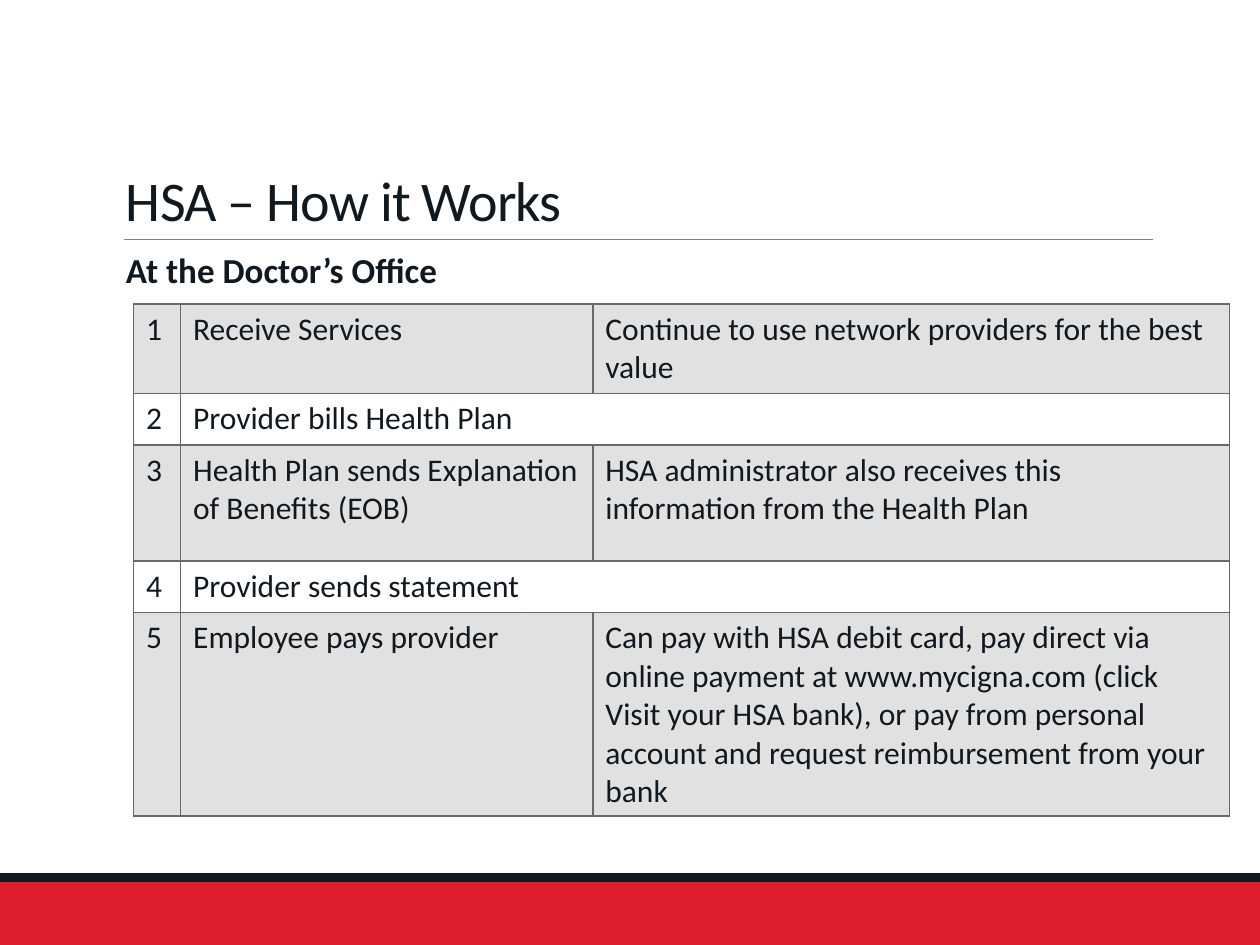
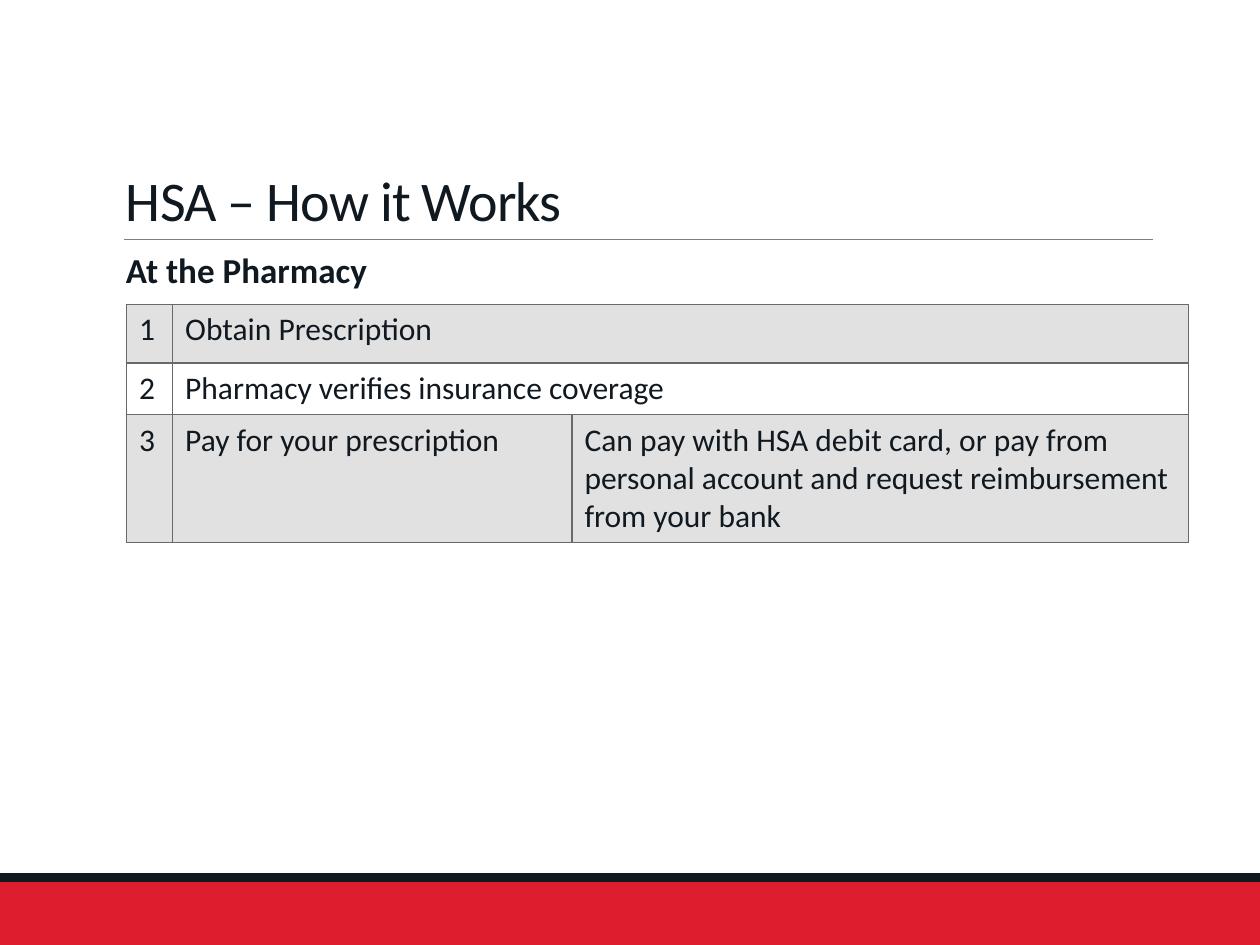
from lxml import etree
from pptx import Presentation
from pptx.dml.color import RGBColor
from pptx.enum.shapes import MSO_CONNECTOR, MSO_SHAPE
from pptx.enum.text import MSO_ANCHOR
from pptx.oxml.ns import qn
from pptx.util import Cm, Pt

# Shared colours and text formats
INK = RGBColor(0x10, 0x18, 0x20)
RED = RGBColor(0xDD, 0x1E, 0x2E)
RULE = RGBColor(0x7F, 0x7F, 0x7F)
BORDER = RGBColor(0x69, 0x69, 0x69)
SHADE = RGBColor(0xE1, 0xE1, 0xE1)

TITLE = {"name": "Calibri", "size": Pt(32)}
SUBTITLE = {"name": "Calibri", "size": Pt(20), "bold": True}
CELL = {"name": "Calibri", "size": Pt(18)}

# Table contents: a row with two entries spans the last two columns
DOCTOR_STEPS = [
    ("1", "Receive Services", "Continue to use network providers for the best value"),
    ("2", "Provider bills Health Plan"),
    ("3", "Health Plan sends Explanation of Benefits (EOB)",
     "HSA administrator also receives this information from the Health Plan"),
    ("4", "Provider sends statement"),
    ("5", "Employee pays provider",
     "Can pay with HSA debit card, pay direct via online payment at "
     "www.mycigna.com (click Visit your HSA bank), or pay from personal "
     "account and request reimbursement from your bank"),
]
PHARMACY_STEPS = [
    ("1", "Obtain Prescription"),
    ("2", "Pharmacy verifies insurance coverage"),
    ("3", "Pay for your prescription",
     "Can pay with HSA debit card, or pay from personal account and request "
     "reimbursement from your bank"),
]


def write(tf, text, fmt):
    p = tf.paragraphs[0]
    r = p.add_run()
    r.text = text
    for name, value in fmt.items():
        setattr(r.font, name, value)
    r.font.color.rgb = INK
    return p, r


def add_band(s, top, height, color):
    sp = s.shapes.add_shape(MSO_SHAPE.RECTANGLE, 0, Cm(top), Cm(25.4), Cm(height))
    sp.shadow.inherit = False
    sp.fill.solid()
    sp.fill.fore_color.rgb = color
    sp.line.fill.background()


def add_rule(s):
    line = s.shapes.add_connector(
        MSO_CONNECTOR.STRAIGHT, Cm(2.49), Cm(4.83), Cm(23.24), Cm(4.83))
    line.line.color.rgb = RULE
    line.line.width = Pt(0.5)
    etree.SubElement(line._element.spPr, qn("a:effectLst"))


def add_title(s, text):
    tf = s.shapes.add_textbox(Cm(2.29), Cm(0.79), Cm(20.96), Cm(4.04)).text_frame
    tf.word_wrap = True
    tf.vertical_anchor = MSO_ANCHOR.BOTTOM
    p, r = write(tf, text, TITLE)
    p.line_spacing = 0.85
    r._r.get_or_add_rPr().set("spc", "-50")


def add_subtitle(s, text, width):
    tf = s.shapes.add_textbox(Cm(2.29), Cm(4.88), Cm(width), Cm(1.11)).text_frame
    tf.word_wrap = False
    write(tf, text, SUBTITLE)


def add_borders(cell):
    tcPr = cell._tc.get_or_add_tcPr()
    for side in ("lnL", "lnR", "lnT", "lnB"):
        ln = etree.SubElement(tcPr, qn(f"a:{side}"), w=str(Pt(1)))
        fill = etree.SubElement(ln, qn("a:solidFill"))
        etree.SubElement(fill, qn("a:srgbClr"), val=str(BORDER))


def add_steps(s, left, top, widths, heights, steps):
    table = s.shapes.add_table(
        len(steps), len(widths), Cm(left), Cm(top),
        Cm(sum(widths)), Cm(sum(heights))).table
    table.first_row = table.horz_banding = False
    for column, width in zip(table.columns, widths):
        column.width = Cm(width)
    for i, (height, step) in enumerate(zip(heights, steps)):
        table.rows[i].height = Cm(height)
        for cell in table.rows[i].cells:
            add_borders(cell)
            # Odd-numbered steps are shaded
            if i % 2 == 0:
                cell.fill.solid()
                cell.fill.fore_color.rgb = SHADE
            else:
                cell.fill.background()
        if len(step) < len(widths):
            table.cell(i, 1).merge(table.cell(i, 2))
        for j, text in enumerate(step):
            write(table.cell(i, j).text_frame, text, CELL)


def add_base_slide(prs, subtitle, subtitle_width):
    s = prs.slides.add_slide(prs.slide_layouts[6])
    add_band(s, 17.78, 1.27, RED)
    add_band(s, 17.6, 0.18, INK)
    add_rule(s)
    add_title(s, "HSA – How it Works")
    add_subtitle(s, subtitle, subtitle_width)
    return s


def main():
    prs = Presentation()
    prs.slide_width, prs.slide_height = Cm(25.4), Cm(19.05)

    # Doctor's office
    s = add_base_slide(prs, "At the Doctor’s Office", 6.86)
    add_steps(s, 2.69, 6.13, (0.95, 8.31, 12.84),
              (1.8, 1.04, 2.34, 1.04, 4.1), DOCTOR_STEPS)

    # Pharmacy
    s = add_base_slide(prs, "At the Pharmacy", 5.41)
    add_steps(s, 2.55, 6.14, (0.93, 8.05, 12.43),
              (1.18, 1.04, 2.58), PHARMACY_STEPS)

    prs.save("out.pptx")


if __name__ == "__main__":
    main()
